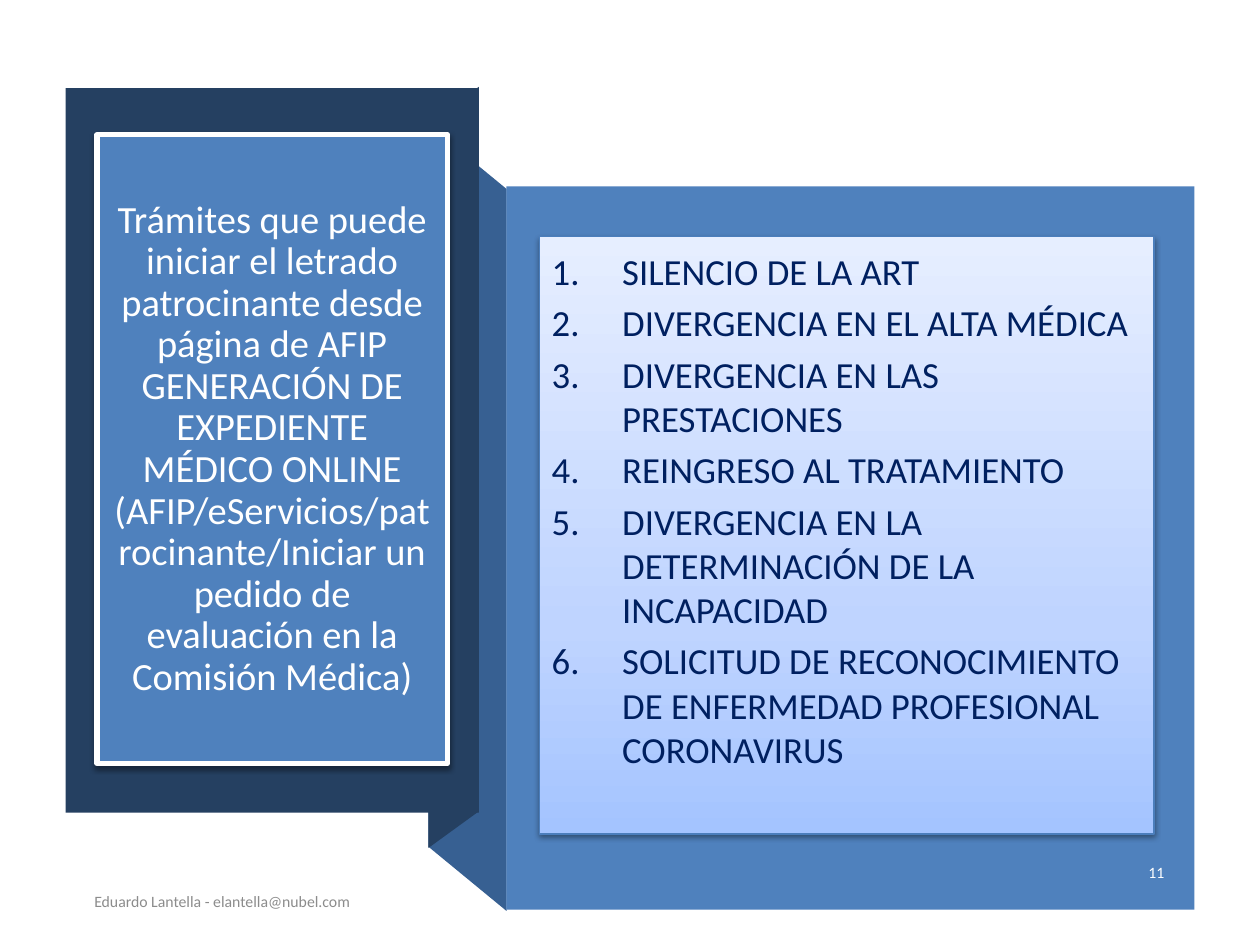
import copy

import lxml.etree
import pptx
import pptx.dml.color
import pptx.enum.shapes
import pptx.enum.text
import pptx.oxml.ns
import pptx.util

Inches = pptx.util.Inches
Pt = pptx.util.Pt
qn = pptx.oxml.ns.qn
ALIGN = pptx.enum.text.PP_ALIGN

COLORS = {
    "navy": "254061",
    "fold": "376092",
    "blue": "4F81BD",
    "edge": "4B7EBC",
    "ink": "002060",
    "gray": "8C8C8C",
    "white": "FFFFFF",
    "black": "000000",
    "deep": "A4C4FF",
    "mid": "BFD4FF",
    "pale": "E6EEFF",
}
TITLE = (
    "Trámites que puede iniciar el letrado patrocinante desde página de AFIP\v"
    "GENERACIÓN DE EXPEDIENTE MÉDICO ONLINE\v"
    "(AFIP/eServicios/patrocinante/Iniciar un pedido de evaluación en la Comisión Médica)"
)
ITEMS = [
    "SILENCIO DE LA ART",
    "DIVERGENCIA EN EL ALTA MÉDICA",
    "DIVERGENCIA EN LAS PRESTACIONES",
    "REINGRESO AL TRATAMIENTO",
    "DIVERGENCIA EN LA DETERMINACIÓN DE LA INCAPACIDAD",
    "SOLICITUD DE RECONOCIMIENTO DE ENFERMEDAD PROFESIONAL CORONAVIRUS",
]


def rgb(name):
    return pptx.dml.color.RGBColor.from_string(COLORS[name])


def paint(shape, fill):
    """Give a flat fill, with no line and no shadow."""
    shape.shadow.inherit = False
    shape.fill.solid()
    shape.fill.fore_color.rgb = rgb(fill)
    shape.line.fill.background()


def add_fold(slide, points, fill):
    first, *rest = [(Inches(x), Inches(y)) for x, y in points]
    pen = slide.shapes.build_freeform(*first)
    pen.add_line_segments(rest, close=True)
    paint(pen.convert_to_shape(), fill)


def add_rect(slide, box, fill):
    kind = pptx.enum.shapes.MSO_SHAPE.RECTANGLE
    shape = slide.shapes.add_shape(kind, *map(Inches, box))
    paint(shape, fill)
    return shape


def set_line(shape, color, width):
    shape.line.color.rgb = rgb(color)
    shape.line.width = Pt(width)


def add_shadow(shape):
    effects = shape._element.spPr.find(qn("a:effectLst"))
    outer = lxml.etree.SubElement(
        effects, qn("a:outerShdw"), blurRad=str(Pt(3.1)), dist=str(Pt(1.6)),
        dir="5400000", rotWithShape="0")
    color = lxml.etree.SubElement(outer, qn("a:srgbClr"), val=COLORS["black"])
    lxml.etree.SubElement(color, qn("a:alpha"), val="38000")


def set_blend(shape, stops):
    """Fill with a gradient that runs from the bottom up."""
    fill = shape.fill
    fill.gradient()
    fill.gradient_angle = 90
    nodes = shape._element.spPr.find(qn("a:gradFill")).find(qn("a:gsLst"))
    while len(nodes) < len(stops):
        nodes.append(copy.deepcopy(nodes[-1]))
    for stop, (place, color) in zip(fill.gradient_stops, stops):
        stop.position = place
        stop.color.rgb = rgb(color)


def write(shape, texts, size, color, align=ALIGN.LEFT):
    """Write the paragraphs in one style and return them."""
    frame = shape.text_frame
    frame.word_wrap = True
    frame.vertical_anchor = pptx.enum.text.MSO_ANCHOR.MIDDLE
    frame.text = "\n".join(texts)
    for para in frame.paragraphs:
        para.alignment = align
        para.font.name = "Calibri"
        para.font.size = Pt(size)
        para.font.color.rgb = rgb(color)
    return frame.paragraphs


def add_number(para):
    props = para._p.get_or_add_pPr()
    props.set("marL", str(Inches(0.56)))
    props.set("indent", str(Inches(-0.56)))
    bullet = lxml.etree.Element(qn("a:buAutoNum"), type="arabicPeriod")
    props.find(qn("a:defRPr")).addprevious(bullet)


def add_title(slide):
    card = add_rect(slide, (0.77, 1.07, 2.78, 4.99), "blue")
    set_line(card, "white", 3)
    add_shadow(card)
    para = write(card, [TITLE], 22, "white", ALIGN.CENTER)[0]
    para.line_spacing = 0.9


def add_list(slide):
    card = add_rect(slide, (4.28, 1.88, 4.88, 4.74), "blue")
    set_blend(card, [(0, "deep"), (0.35, "mid"), (1, "pale")])
    set_line(card, "edge", 0.75)
    add_shadow(card)
    card.text_frame.margin_bottom = Inches(0.46)
    for para in write(card, ITEMS, 21, "ink"):
        para.space_before = Pt(4.2)
        add_number(para)


def add_note(slide, box, text, color, align=ALIGN.LEFT):
    note = slide.shapes.add_textbox(*map(Inches, box))
    para = write(note, [text], 9, color, align)[0]
    para.space_after = Pt(6)


def main():
    deck = pptx.Presentation()
    deck.slide_width, deck.slide_height = Inches(10), Inches(7.5)
    slide = deck.slides.add_slide(deck.slide_layouts[6])
    add_fold(slide, [(4.02, 7.23), (3.4, 6.72), (3.4, 0.99), (4.02, 1.5)], "fold")
    add_fold(slide, [(3.8, 6.44), (3.4, 6.73), (3.4, 0.98), (3.8, 0.69)], "navy")
    add_rect(slide, (0.52, 0.7, 3.28, 5.75), "navy")
    add_title(slide)
    add_rect(slide, (4.02, 1.48, 5.46, 5.74), "blue")
    add_list(slide)
    add_note(slide, (0.65, 6.98, 5.54, 0.35),
             "Eduardo Lantella - elantella@nubel.com", "gray")
    add_note(slide, (8.78, 6.75, 0.56, 0.35), "11", "white", ALIGN.RIGHT)
    deck.save("out.pptx")


if __name__ == "__main__":
    main()
